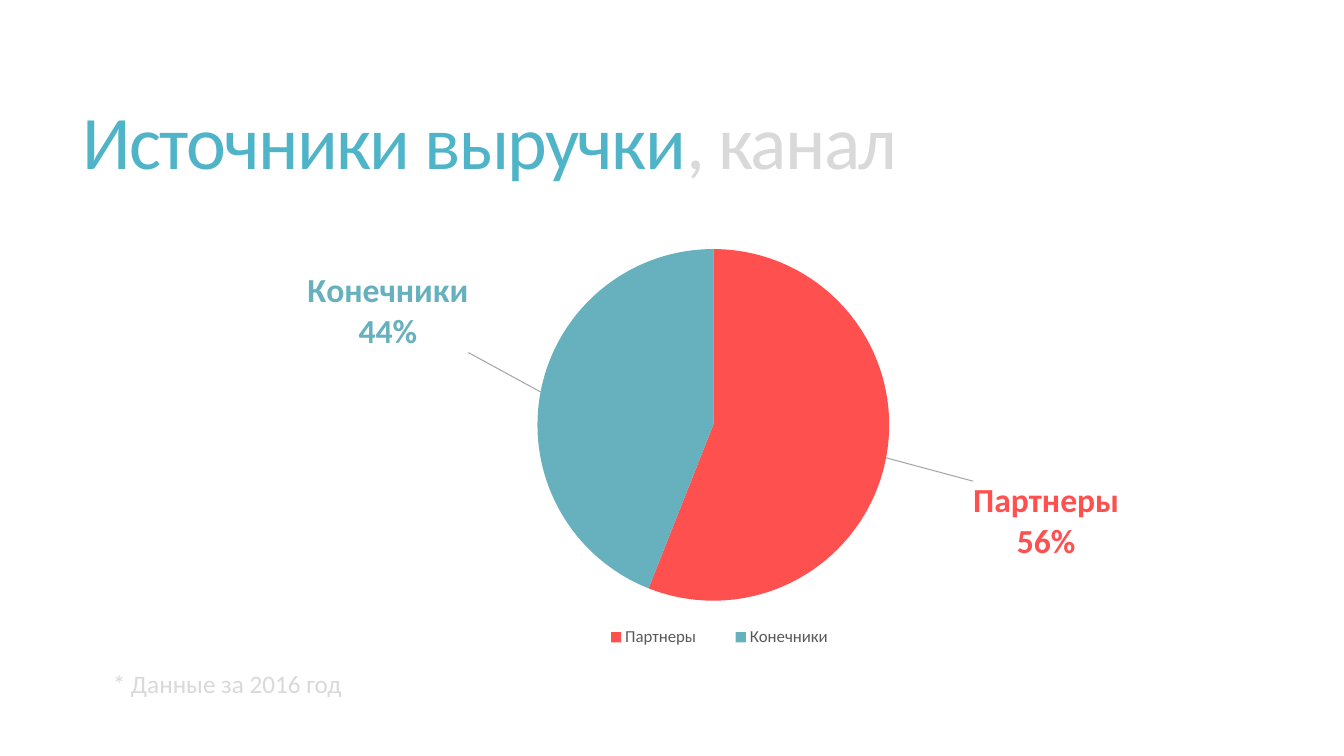
from dataclasses import dataclass

from lxml import etree
from pptx import Presentation
from pptx.chart.data import CategoryChartData
from pptx.dml.color import RGBColor
from pptx.enum.chart import XL_CHART_TYPE, XL_LABEL_POSITION, XL_LEGEND_POSITION
from pptx.enum.text import MSO_ANCHOR, PP_ALIGN
from pptx.oxml.ns import qn
from pptx.util import Inches, Pt

PIE = XL_CHART_TYPE.PIE
INSIDE_END = XL_LABEL_POSITION.INSIDE_END
LEGEND_TOP = XL_LEGEND_POSITION.TOP
MIDDLE = MSO_ANCHOR.MIDDLE
LEFT = PP_ALIGN.LEFT

FONT = "Calibri"
TEAL, PALE, GRAY, LEADER = "50B4C8", "D9D9D9", "595959", "A6A6A6"


@dataclass
class Channel:
    name: str
    share: int
    color: str
    label_shift: tuple[float, float]  # fractions of the chart size


CHANNELS = [
    Channel("Партнеры", 56, "FF5050", (0.21, 0.2)),
    Channel("Конечники", 44, "66B1BD", (-0.21, -0.23)),
]


def style_font(font, size: float, color: str, bold: bool = False) -> None:
    font.name = FONT
    font.size = Pt(size)
    font.bold = bold
    font.color.rgb = RGBColor.from_string(color)


def add_child(parent, tag: str, value=None):
    child = etree.SubElement(parent, qn(tag))
    if value is not None:
        child.set("val", str(value))
    return child


def make_layout(**settings):
    """Return a manual chart layout with the given settings in schema order."""
    layout = etree.Element(qn("c:layout"))
    manual = add_child(layout, "c:manualLayout")
    for name, value in settings.items():
        add_child(manual, f"c:{name}", value)
    return layout


def show_name_and_percent(labels) -> None:
    """Show category and percentage on two lines, without wrapping."""
    for name, shown in (("Val", 0), ("CatName", 1), ("Percent", 1)):
        labels.find(qn(f"c:show{name}")).set("val", str(shown))
    separator = etree.Element(qn("c:separator"))
    separator.text = "\n"
    labels.find(qn("c:showBubbleSize")).addnext(separator)
    labels.find(qn("c:txPr")).find(qn("a:bodyPr")).set("wrap", "none")


def add_title(slide) -> None:
    title = slide.shapes.title
    title.left, title.top = Inches(0.72), Inches(0.55)
    title.width, title.height = Inches(11.78), Inches(1.81)
    title.text_frame.vertical_anchor = MIDDLE
    paragraph = title.text_frame.paragraphs[0]
    paragraph.alignment = LEFT
    paragraph.line_spacing = 0.85
    for text, color in (("Источники выручки", TEAL), (", канал", PALE)):
        run = paragraph.add_run()
        run.text = text
        style_font(run.font, 54, color)
        run.font._element.set("spc", "-120")


def add_pie(slide) -> None:
    data = CategoryChartData()
    data.categories = [channel.name for channel in CHANNELS]
    data.add_series("Series 1", [channel.share for channel in CHANNELS])
    chart = slide.shapes.add_chart(
        PIE, Inches(1.21), Inches(1.94), Inches(11.29), Inches(5.28), data
    ).chart
    style_font(chart.font, 10, "000000")
    chart.has_title = False

    # Plot area
    plot = chart.plots[0]
    plot.vary_by_categories = True
    plot_area = chart._chartSpace.chart.plotArea
    for old_layout in plot_area.findall(qn("c:layout")):
        plot_area.remove(old_layout)
    plot_area.insert(0, make_layout(
        layoutTarget="inner", xMode="edge", yMode="edge",
        x=0.365, y=0.082, w=0.309, h=0.698))

    # Slices and their labels
    series = plot.series[0]
    labels = series.data_labels
    style_font(labels.font, 24, "000000", bold=True)
    labels.position = INSIDE_END
    for index, channel in enumerate(CHANNELS):
        point = series.points[index]
        point.format.fill.solid()
        point.format.fill.fore_color.rgb = RGBColor.from_string(channel.color)
        label = point.data_label
        style_font(label.font, 24, channel.color, bold=True)
        label.position = INSIDE_END
        element = labels._element.findall(qn("c:dLbl"))[index]
        shift_x, shift_y = channel.label_shift
        element.find(qn("c:idx")).addnext(make_layout(x=shift_x, y=shift_y))
        show_name_and_percent(element)

    # Leader lines
    show_name_and_percent(labels._element)
    for old_flag in labels._element.findall(qn("c:showLeaderLines")):
        labels._element.remove(old_flag)
    add_child(labels._element, "c:showLeaderLines", 1)
    leader_lines = add_child(labels._element, "c:leaderLines")
    line = add_child(add_child(leader_lines, "c:spPr"), "a:ln")
    line.set("w", str(Pt(0.75)))
    add_child(add_child(line, "a:solidFill"), "a:srgbClr", LEADER)

    # Legend
    chart.has_legend = True
    legend = chart.legend
    legend.position = LEGEND_TOP
    legend.include_in_layout = False
    style_font(legend.font, 12, GRAY)
    for old_layout in legend._element.findall(qn("c:layout")):
        legend._element.remove(old_layout)
    legend._element.find(qn("c:legendPos")).addnext(make_layout(
        xMode="edge", yMode="edge", x=0.4, y=0.8, w=0.25, h=0.06))


def add_footnote(slide) -> None:
    box = slide.shapes.add_textbox(
        Inches(1.02), Inches(6.58), Inches(2.48), Inches(0.4))
    box.text_frame.word_wrap = False
    box.text_frame.text = "* Данные за 2016 год"
    style_font(box.text_frame.paragraphs[0].runs[0].font, 18, PALE)


def main() -> None:
    presentation = Presentation()
    presentation.slide_width = Inches(13.33)
    presentation.slide_height = Inches(7.5)
    slide = presentation.slides.add_slide(presentation.slide_layouts[5])
    add_title(slide)
    add_pie(slide)
    add_footnote(slide)
    presentation.save("out.pptx")


if __name__ == "__main__":
    main()
